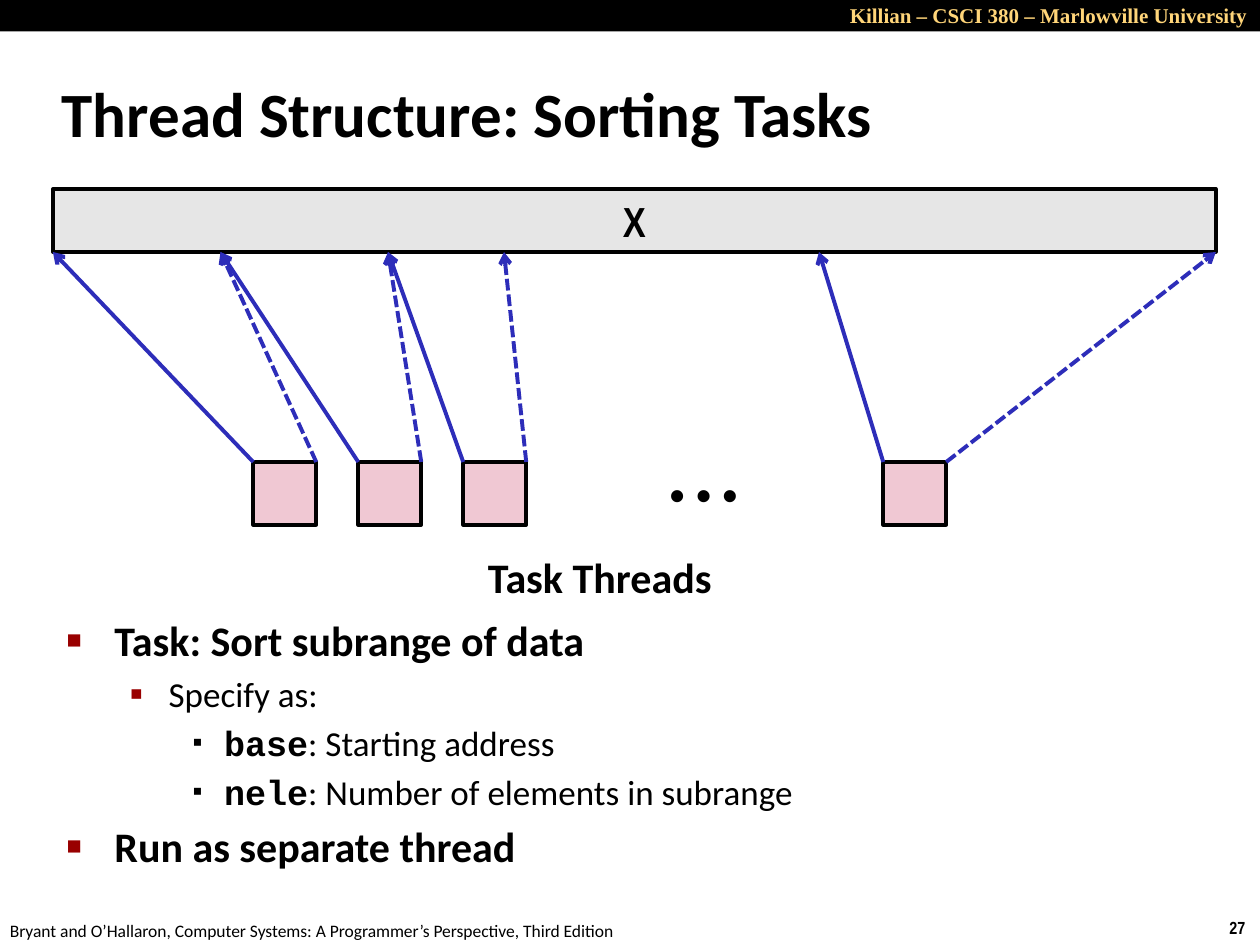
"""Build the slide on how sorting tasks map threads to subranges of an array."""
from lxml import etree
from pptx import Presentation
from pptx.dml.color import RGBColor
from pptx.enum.dml import MSO_LINE
from pptx.enum.shapes import MSO_CONNECTOR, MSO_SHAPE
from pptx.enum.text import MSO_ANCHOR, MSO_AUTO_SIZE, PP_ALIGN
from pptx.oxml.ns import qn
from pptx.util import Inches, Pt

RECTANGLE = MSO_SHAPE.RECTANGLE
STRAIGHT = MSO_CONNECTOR.STRAIGHT
DASHED = MSO_LINE.SQUARE_DOT
TOP, MIDDLE = MSO_ANCHOR.TOP, MSO_ANCHOR.MIDDLE
LEFT, CENTER, RIGHT = PP_ALIGN.LEFT, PP_ALIGN.CENTER, PP_ALIGN.RIGHT

BLACK = RGBColor(0x00, 0x00, 0x00)
GOLD = RGBColor(0xFF, 0xD5, 0x79)
GRAY = RGBColor(0xE6, 0xE6, 0xE6)
PINK = RGBColor(0xF0, 0xC8, 0xD3)
BLUE = RGBColor(0x2D, 0x2D, 0xB9)
DARK_RED = RGBColor(0x99, 0x00, 0x00)

prs = Presentation()
prs.slide_width, prs.slide_height = Inches(10), Inches(7.5)
slide = prs.slides.add_slide(prs.slide_layouts[5])
shapes = slide.shapes

COLUMN = prs.slide_width / 12
ROW = prs.slide_height / 45
THREAD_SIDE = 3 * ROW
ARRAY_LEFT, ARRAY_RIGHT = Inches(0.42), Inches(9.65)
ARRAY_TOP, ARRAY_BOTTOM = 9 * ROW, 12 * ROW
THREADS_LEFT, THREADS_TOP = Inches(2.01), 22 * ROW


def write(paragraph, text, size=24, font="Calibri", color=BLACK, bold=True, align=LEFT):
    paragraph.alignment = align
    run = paragraph.add_run()
    run.text = text
    run.font.size, run.font.name, run.font.bold = Pt(size), font, bold
    run.font.color.rgb = color


def add_block(left, top, width, height, fill, outlined=True):
    block = shapes.add_shape(RECTANGLE, int(left), int(top), int(width), int(height))
    block.shadow.inherit = False
    block.fill.solid()
    block.fill.fore_color.rgb = fill
    if outlined:
        block.line.color.rgb, block.line.width = BLACK, Pt(2)
    else:
        block.line.fill.background()
    return block


add_block(0, 0, prs.slide_width, 1.5 * ROW, BLACK, outlined=False)

title = shapes.title
title.left, title.top, title.width, title.height = map(Inches, (0.39, 0.48, 8.3, 0.83))
title.text_frame.auto_size = MSO_AUTO_SIZE.NONE
title.text_frame.vertical_anchor = MIDDLE
write(title.text_frame.paragraphs[0], "Thread Structure: Sorting Tasks", size=36)
title_format = title.text_frame.paragraphs[0]._p.get_or_add_pPr()
title_format.set("marL", str(Inches(0.13)))
title_format.set("indent", str(-Inches(0.13)))

labels = [
    ((9.66, 7.23, 0.34, 0.27), "27", TOP, False,
     dict(size=10, font="Arial Narrow")),
    ((-0.02, 7.25, 5.08, 0.27),
     "Bryant and O’Hallaron, Computer Systems: A Programmer’s Perspective, Third Edition",
     TOP, False, dict(size=10, bold=False)),
    ((4.5, -0.03, 5.5, 0.3), "Killian – CSCI 380 – Marlowville University", TOP, True,
     dict(size=12, font="Times New Roman", color=GOLD, align=RIGHT)),
    ((4.17, 3.67, 2.83, 0.5), "• • •", MIDDLE, False, dict(font="Arial", align=CENTER)),
    ((2.02, 4.33, 5.48, 0.5), "Task Threads", MIDDLE, False, dict(align=CENTER)),
]
for place, text, anchor, wrap, style in labels:
    frame = shapes.add_textbox(*map(Inches, place)).text_frame
    frame.word_wrap, frame.vertical_anchor = wrap, anchor
    write(frame.paragraphs[0], text, **style)

outline = [
    (0, "■", 60, DARK_RED, 0.38, 0.38, [("Task: Sort subrange of data", {})]),
    (1, "▪", 110, DARK_RED, 0.81, 0.31, [("Specify as:", dict(size=20, bold=False))]),
    (2, "▪", 80, BLACK, 1.25, 0.25,
     [("base", dict(size=20, font="Courier New")),
      (": Starting address", dict(size=20, bold=False))]),
    (2, "▪", 80, BLACK, 1.25, 0.25,
     [("nele", dict(size=20, font="Courier New")),
      (": Number of elements in subrange", dict(size=20, bold=False))]),
    (0, "■", 60, DARK_RED, 0.38, 0.38, [("Run as separate thread", {})]),
]
body = shapes.add_textbox(*map(Inches, (0.43, 4.83, 8.64, 2.1))).text_frame
body.word_wrap = True
for number, (level, bullet, percent, color, margin, hanging, runs) in enumerate(outline):
    paragraph = body.add_paragraph() if number else body.paragraphs[0]
    paragraph.level = level
    for text, style in runs:
        write(paragraph, text, **style)
    layout = paragraph._p.get_or_add_pPr()
    layout.set("marL", str(Inches(margin)))
    layout.set("indent", str(-Inches(hanging)))
    before = etree.SubElement(layout, qn("a:spcBef"))
    etree.SubElement(before, qn("a:spcPct"), val="20000")
    bullet_color = etree.SubElement(layout, qn("a:buClr"))
    etree.SubElement(bullet_color, qn("a:srgbClr"), val=str(color))
    etree.SubElement(layout, qn("a:buSzPct"), val=str(percent * 1000))
    etree.SubElement(layout, qn("a:buFont"), typeface="Arial")
    etree.SubElement(layout, qn("a:buChar"), char=bullet)

array = add_block(ARRAY_LEFT, ARRAY_TOP, ARRAY_RIGHT - ARRAY_LEFT, ARRAY_BOTTOM - ARRAY_TOP, GRAY)
array.text_frame.word_wrap = False
array.text_frame.vertical_anchor = MIDDLE
write(array.text_frame.paragraphs[0], "X", font="Arial Narrow", align=CENTER)

subranges = [
    (0, ARRAY_LEFT, Inches(1.75)),
    (1, Inches(1.75), Inches(3.08)),
    (2, Inches(3.08), Inches(4)),
    (6, Inches(6.5), ARRAY_RIGHT),
]
for column, start, end in subranges:
    thread_left = THREADS_LEFT + column * COLUMN
    add_block(thread_left, THREADS_TOP, THREAD_SIDE, THREAD_SIDE, PINK)
    for corner, target, dash in (
        (thread_left, start, None),
        (thread_left + THREAD_SIDE, end, DASHED),
    ):
        arrow = shapes.add_connector(
            STRAIGHT, int(corner), int(THREADS_TOP), int(target), int(ARRAY_BOTTOM))
        arrow.line.color.rgb, arrow.line.width = BLUE, Pt(2.25)
        arrow.line.dash_style = dash
        etree.SubElement(arrow.line._get_or_add_ln(), qn("a:tailEnd"), type="arrow")
        etree.SubElement(arrow._element.spPr, qn("a:effectLst"))

prs.save("out.pptx")
